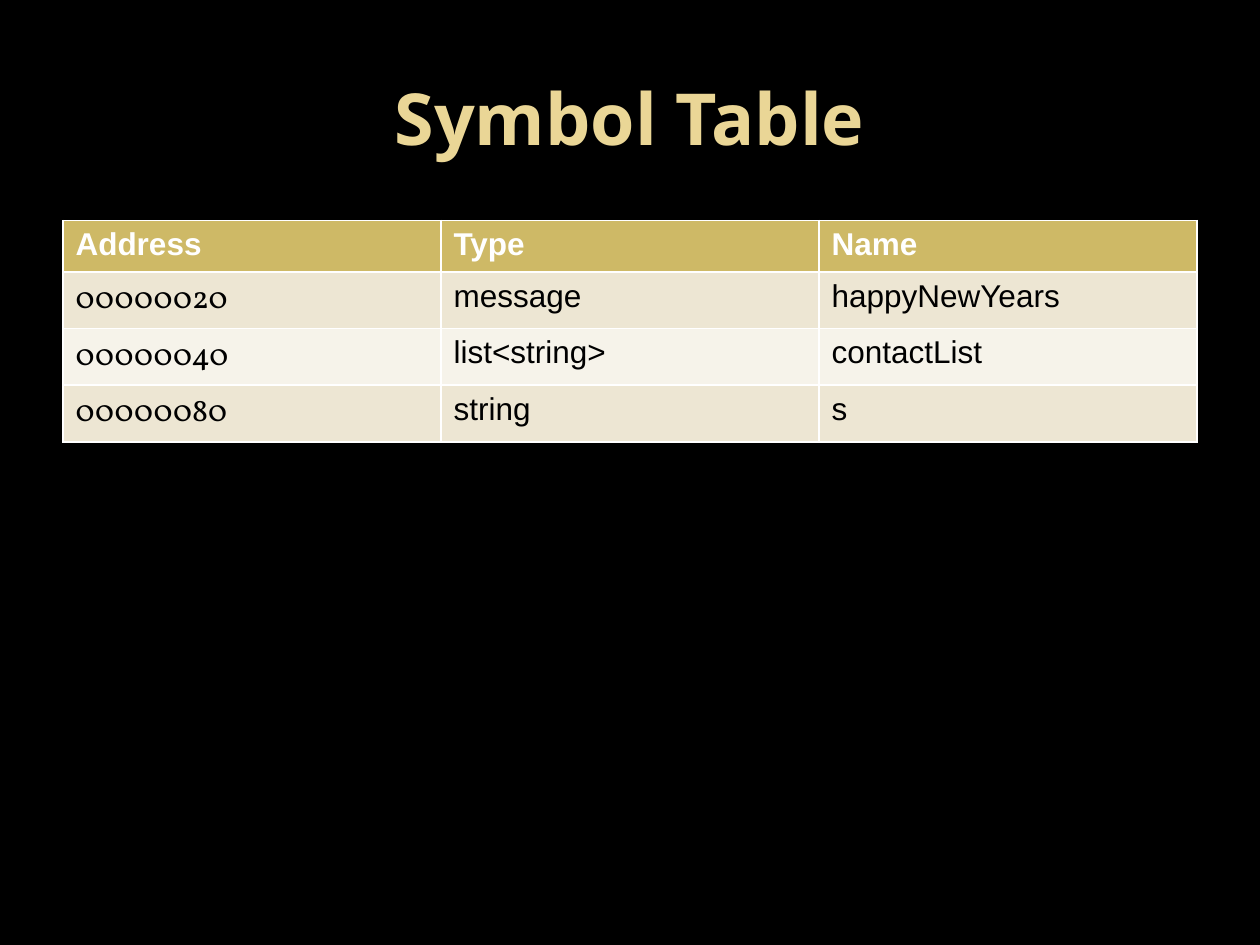
import pptx
import pptx.dml.color
import pptx.enum.text
import pptx.util
from pptx.util import Inches


def color(value):
    return pptx.dml.color.RGBColor.from_string(value)


class SlideBuilder:
    """Builds slides in a black and gold style."""

    BACKGROUND = "000000"
    TITLE = dict(name="Open Sans", size=pptx.util.Pt(41), bold=True)
    TITLE_COLOR = "EAD696"
    HEADER = dict(name="Arial", size=pptx.util.Pt(18), bold=True)
    BODY = dict(HEADER, bold=False)
    ADDRESS = dict(BODY, name="Vollkorn")
    HEADER_FILL = "CEB966"
    BAND_FILLS = ("EDE6D3", "F6F3EA")

    def __init__(self, presentation):
        self.slide = presentation.slides.add_slide(presentation.slide_layouts[5])
        fill = self.slide.background.fill
        fill.solid()
        fill.fore_color.rgb = color(self.BACKGROUND)

    def format_text(self, paragraph, text, style, text_color):
        paragraph.text = text
        for name, value in style.items():
            setattr(paragraph.font, name, value)
        paragraph.font.color.rgb = color(text_color)

    def add_title(self, text, left, top, width, height):
        title = self.slide.shapes.title
        title.left, title.top = Inches(left), Inches(top)
        title.width, title.height = Inches(width), Inches(height)
        frame = title.text_frame
        frame.auto_size = pptx.enum.text.MSO_AUTO_SIZE.NONE
        frame.vertical_anchor = pptx.enum.text.MSO_ANCHOR.MIDDLE
        paragraph = frame.paragraphs[0]
        paragraph.alignment = pptx.enum.text.PP_ALIGN.CENTER
        self.format_text(paragraph, text, self.TITLE, self.TITLE_COLOR)

    def add_table(self, rows, left, top, width, row_height):
        table = self.slide.shapes.add_table(
            len(rows), len(rows[0]), Inches(left), Inches(top),
            Inches(width), Inches(row_height * len(rows))).table
        for row_index, row in enumerate(rows):
            for column_index, text in enumerate(row):
                if row_index == 0:
                    style, text_color, fill = self.HEADER, "FFFFFF", self.HEADER_FILL
                else:
                    style = self.ADDRESS if column_index == 0 else self.BODY
                    text_color, fill = "000000", self.BAND_FILLS[(row_index - 1) % 2]
                cell = table.cell(row_index, column_index)
                cell.fill.solid()
                cell.fill.fore_color.rgb = color(fill)
                self.format_text(cell.text_frame.paragraphs[0], text, style, text_color)


def main():
    presentation = pptx.Presentation()
    presentation.slide_width, presentation.slide_height = Inches(10), Inches(7.5)
    builder = SlideBuilder(presentation)
    builder.add_title("Symbol Table", 0.5, 0.3, 9, 1.25)
    symbols = [
        ("Address", "Type", "Name"),
        ("00000020", "message", "happyNewYears"),
        ("00000040", "list<string>", "contactList"),
        ("00000080", "string", "s"),
    ]
    builder.add_table(symbols, 0.5, 1.75, 9, 0.41)
    presentation.save("out.pptx")


if __name__ == "__main__":
    main()
